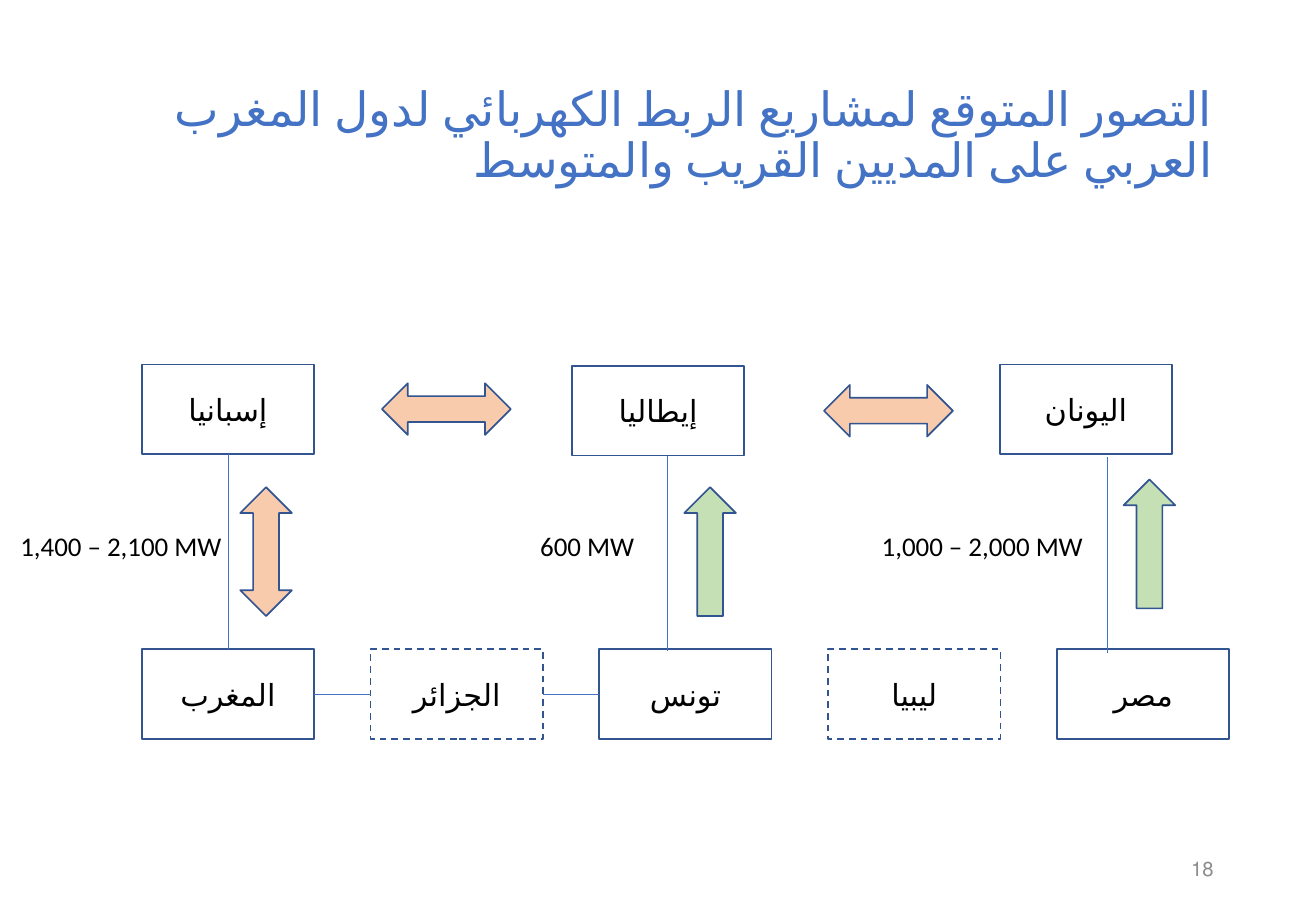
from dataclasses import dataclass

from lxml.etree import SubElement
from pptx import Presentation
from pptx.dml.color import RGBColor
from pptx.enum.dml import MSO_LINE
from pptx.enum.lang import MSO_LANGUAGE_ID
from pptx.enum.shapes import MSO_CONNECTOR, MSO_SHAPE
from pptx.enum.text import MSO_ANCHOR, MSO_AUTO_SIZE, PP_ALIGN
from pptx.oxml.ns import qn
from pptx.util import Pt


@dataclass(frozen=True)
class Theme:
    font: str = "Calibri"
    accent: str = "4472C4"
    outline: str = "325491"
    box: str = "FFFFFF"
    text: str = "000000"
    muted: str = "8C8C8C"
    exchange: str = "F8CBAD"
    export: str = "C5E0B4"
    title_size: int = 28
    country_size: int = 18
    capacity_size: int = 16
    number_size: int = 12
    outline_width: float = 1
    link_width: float = 0.5


THEME = Theme()
ARABIC = MSO_LANGUAGE_ID.ARABIC
ENGLISH = MSO_LANGUAGE_ID.ENGLISH_US
BOX_WIDTH, BOX_HEIGHT = 102.2, 53.3
ARROW_WIDTH, ARROW_LENGTH = 30.6, 76.4
SOUTH_LEFT, SOUTH_TOP, SOUTH_STEP = 84, 384.8, 135.6

NORTH = [("إسبانيا", 84, 216), ("إيطاليا", 339, 216.8), ("اليونان", 592.6, 216)]
SOUTH = [("المغرب", False), ("الجزائر", True), ("تونس", False),
         ("ليبيا", True), ("مصر", False)]
FREE_LINKS = [(395.7, 270, 386), (656.2, 271, 387)]
ARROWS = [
    (MSO_SHAPE.UP_DOWN_ARROW, 142.4, 288.8, THEME.exchange, 0),
    (MSO_SHAPE.UP_ARROW, 405.6, 288.8, THEME.export, 0),
    (MSO_SHAPE.UP_ARROW, 666, 284.2, THEME.export, 0),
    (MSO_SHAPE.UP_DOWN_ARROW, 249.3, 204.3, THEME.exchange, 90),
    (MSO_SHAPE.UP_DOWN_ARROW, 511.3, 205.3, THEME.exchange, 90),
]
CAPACITIES = [
    ("1,400 – 2,100 MW", 5, 221, PP_ALIGN.LEFT),
    ("600 MW", 307.4, 75.6, PP_ALIGN.RIGHT),
    ("1,000 – 2,000 MW", 515.5, 140.4, PP_ALIGN.LEFT),
]


def write(shape, text, size, color, align, language, right_to_left=False):
    shape.text_frame.text = text
    shape.text_frame.word_wrap = True
    paragraph = shape.text_frame.paragraphs[0]
    paragraph.alignment = align
    if right_to_left:
        paragraph._p.get_or_add_pPr().set("rtl", "1")
    for run in paragraph.runs:
        run.font.size = Pt(size)
        run.font.name = THEME.font
        run.font.language_id = language
        run.font.color.rgb = RGBColor.from_string(color)
    return paragraph


def add_title(slide, text):
    title = slide.shapes.title
    title.left, title.top = Pt(53.6), Pt(28.8)
    title.width, title.height = Pt(672.5), Pt(104.4)
    paragraph = write(title, text, THEME.title_size, THEME.accent,
                      PP_ALIGN.RIGHT, ARABIC, right_to_left=True)
    paragraph.line_spacing = 0.9
    title.text_frame.auto_size = MSO_AUTO_SIZE.NONE
    title.text_frame.vertical_anchor = MSO_ANCHOR.MIDDLE


def add_filled(slide, kind, left, top, width, height, color):
    shape = slide.shapes.add_shape(kind, Pt(left), Pt(top), Pt(width), Pt(height))
    shape.shadow.inherit = False
    shape.fill.solid()
    shape.fill.fore_color.rgb = RGBColor.from_string(color)
    shape.line.color.rgb = RGBColor.from_string(THEME.outline)
    shape.line.width = Pt(THEME.outline_width)
    return shape


def add_country(slide, name, left, top, dashed=False):
    box = add_filled(slide, MSO_SHAPE.RECTANGLE, left, top,
                     BOX_WIDTH, BOX_HEIGHT, THEME.box)
    if dashed:
        box.line.dash_style = MSO_LINE.DASH
    write(box, name, THEME.country_size, THEME.text, PP_ALIGN.CENTER, ARABIC)
    box.text_frame.vertical_anchor = MSO_ANCHOR.MIDDLE
    return box


def add_link(slide, left=0, top=0, bottom=0):
    link = slide.shapes.add_connector(MSO_CONNECTOR.STRAIGHT, Pt(left), Pt(top),
                                      Pt(left), Pt(bottom))
    link.line.color.rgb = RGBColor.from_string(THEME.accent)
    link.line.width = Pt(THEME.link_width)
    SubElement(link._element.spPr, qn("a:effectLst"))
    return link


def join(slide, start, start_side, end, end_side):
    link = add_link(slide)
    link.begin_connect(start, start_side)
    link.end_connect(end, end_side)


def add_label(slide, text, left, top, width, height, size, color, align,
              right_to_left=False):
    label = slide.shapes.add_textbox(Pt(left), Pt(top), Pt(width), Pt(height))
    write(label, text, size, color, align, ENGLISH, right_to_left)
    return label


def main():
    presentation = Presentation()
    presentation.slide_width, presentation.slide_height = Pt(780), Pt(540)
    slide = presentation.slides.add_slide(presentation.slide_layouts[5])

    add_title(slide, "التصور المتوقع لمشاريع الربط الكهربائي لدول المغرب "
                     "العربي على المديين القريب والمتوسط")
    number = add_label(slide, "18", 550.8, 500.4, 175.7, 28.8, THEME.number_size,
                       THEME.muted, PP_ALIGN.RIGHT, right_to_left=True)
    number.text_frame.vertical_anchor = MSO_ANCHOR.MIDDLE

    north = [add_country(slide, *country) for country in NORTH]
    south = [add_country(slide, name, SOUTH_LEFT + index * SOUTH_STEP, SOUTH_TOP, dashed)
             for index, (name, dashed) in enumerate(SOUTH)]

    join(slide, north[0], 2, south[0], 0)
    for left, top, bottom in FREE_LINKS:
        add_link(slide, left, top, bottom)
    for west, east in zip(south[:2], south[1:3]):
        join(slide, west, 3, east, 1)

    for kind, left, top, color, rotation in ARROWS:
        arrow = add_filled(slide, kind, left, top, ARROW_WIDTH, ARROW_LENGTH, color)
        arrow.rotation = rotation

    for text, left, width, align in CAPACITIES:
        label = add_label(slide, text, left, 310.3, width, 26.6,
                          THEME.capacity_size, THEME.text, align)
        label.text_frame.auto_size = MSO_AUTO_SIZE.SHAPE_TO_FIT_TEXT

    presentation.save("out.pptx")


if __name__ == "__main__":
    main()
